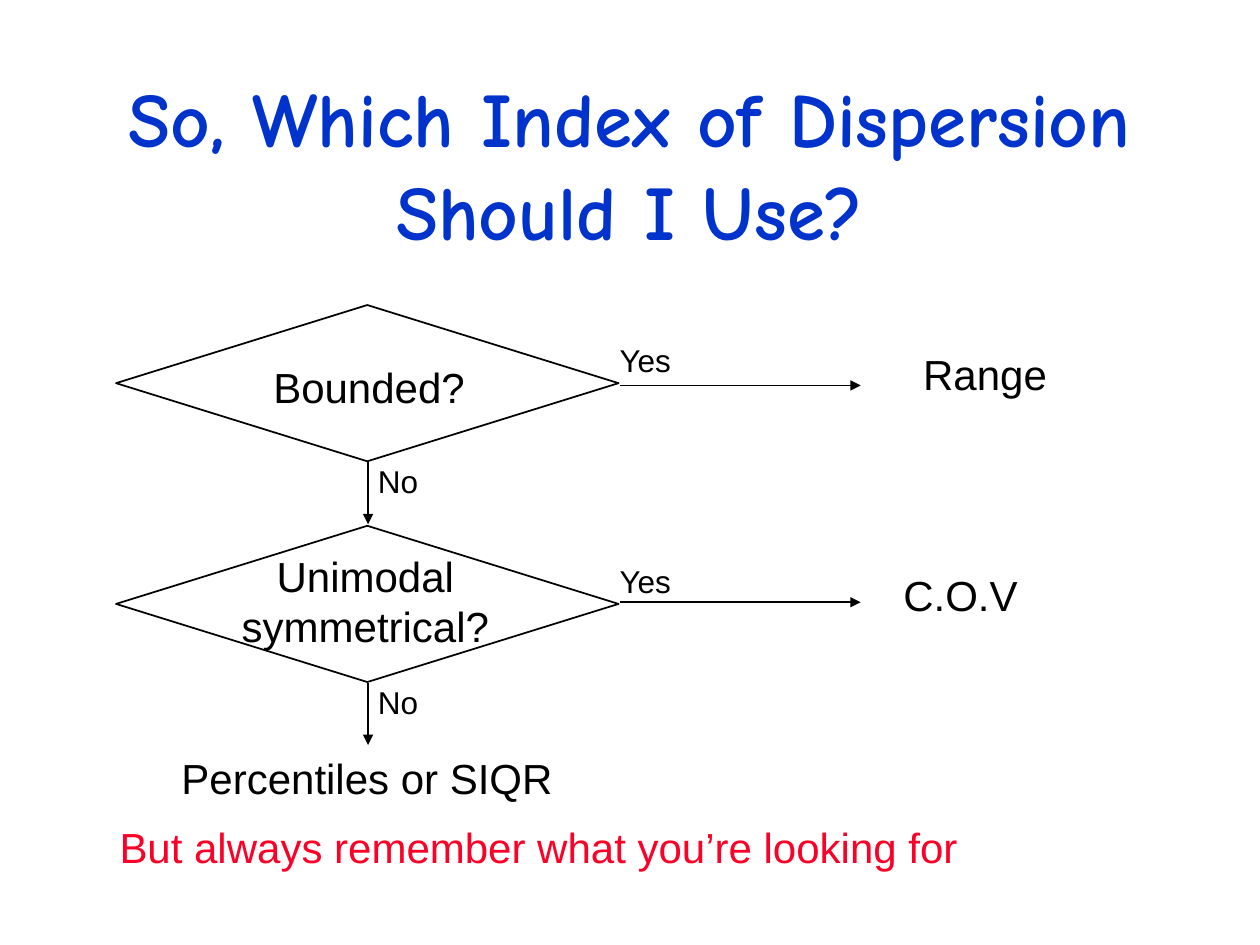
"""Build a decision flowchart for choosing an index of dispersion."""
import pptx
import pptx.dml.color
import pptx.enum.shapes
import pptx.enum.text
import pptx.oxml.ns
import pptx.util
from lxml import etree

Cm = pptx.util.Cm
Pt = pptx.util.Pt
RGB = pptx.dml.color.RGBColor
ALIGN = pptx.enum.text.PP_ALIGN

THEME = {
    "ink": RGB(0x00, 0x00, 0x00),
    "line": Pt(1),
    "title": {"name": "Comic Neue", "size": Pt(44), "bold": True, "color": RGB(0x00, 0x33, 0xCC)},
    "step": {"name": "Arial", "size": Pt(24), "color": RGB(0x00, 0x00, 0x00)},
    "label": {"name": "Arial", "size": Pt(18), "color": RGB(0x00, 0x00, 0x00)},
    "note": {"name": "Arial", "size": Pt(24), "color": RGB(0xFC, 0x01, 0x28)},
}
PITCH = 4.45


def write(tf, lines, style, align):
    for i, line in enumerate(lines):
        p = tf.paragraphs[0] if i == 0 else tf.add_paragraph()
        p.alignment = align
        r = p.add_run()
        r.text = line
        for key, value in THEME[style].items():
            if key == "color":
                r.font.color.rgb = value
            else:
                setattr(r.font, key, value)


def arrow(s, x1, y1, x2, y2):
    sp = s.shapes.add_connector(pptx.enum.shapes.MSO_CONNECTOR.STRAIGHT, Cm(x1), Cm(y1), Cm(x2), Cm(y2))
    sp.line.color.rgb = THEME["ink"]
    sp.line.width = THEME["line"]
    ln = sp.line._get_or_add_ln()
    etree.SubElement(ln, pptx.oxml.ns.qn("a:tailEnd"), type="triangle")
    etree.SubElement(sp._element.spPr, pptx.oxml.ns.qn("a:effectLst"))


prs = pptx.Presentation()
prs.slide_width, prs.slide_height = Cm(25.4), Cm(19.05)
s = prs.slides.add_slide(prs.slide_layouts[5])

title = s.shapes.title
for key, value in {"left": 1.9, "top": 1.7, "width": 21.6, "height": 3.18}.items():
    setattr(title, key, Cm(value))
tf = title.text_frame
for key, value in {
    "word_wrap": True,
    "auto_size": pptx.enum.text.MSO_AUTO_SIZE.NONE,
    "vertical_anchor": pptx.enum.text.MSO_ANCHOR.MIDDLE,
}.items():
    setattr(tf, key, value)
write(tf, ["So, Which Index of Dispersion Should I Use?"], "title", ALIGN.CENTER)

for row in range(2):
    sp = s.shapes.add_shape(
        pptx.enum.shapes.MSO_SHAPE.DIAMOND, Cm(2.34), Cm(6.15 + row * PITCH), Cm(10.13), Cm(3.15))
    sp.shadow.inherit = False
    sp.fill.background()
    sp.line.color.rgb = THEME["ink"]
    sp.line.width = THEME["line"]
    arrow(s, 7.42, 9.32 + row * PITCH, 7.42, 10.57 + row * PITCH)

for y in (7.77, 12.14):
    arrow(s, 12.5, y, 17.35, y)

texts = [
    (["Bounded?"], 5.26, 7.16, 4.37, 1.27, "step", ALIGN.LEFT, False),
    (["Unimodal", "symmetrical?"], 4.62, 10.97, 5.49, 2.29, "step", ALIGN.CENTER, False),
    (["Range"], 18.36, 6.91, 3.84, 1.6, "step", ALIGN.LEFT, False),
    (["C.O.V"], 17.96, 11.35, 3.58, 1.6, "step", ALIGN.LEFT, False),
    (["Percentiles or SIQR"], 2.03, 15.04, 10.74, 1.6, "step", ALIGN.CENTER, True),
    (["But always remember what you’re looking for"], 2.16, 16.43, 22.99, 1.6, "note", ALIGN.LEFT, False),
]
for row in range(2):
    texts.append((["Yes"], 12.24, 6.76 + row * PITCH, 1.6, 1.02, "label", ALIGN.LEFT, False))
    texts.append((["No"], 7.37, 9.19 + row * PITCH, 1.32, 1.02, "label", ALIGN.LEFT, False))

for lines, x, y, w, h, style, align, wrap in texts:
    tf = s.shapes.add_textbox(Cm(x), Cm(y), Cm(w), Cm(h)).text_frame
    tf.word_wrap = wrap
    tf.auto_size = pptx.enum.text.MSO_AUTO_SIZE.SHAPE_TO_FIT_TEXT
    write(tf, lines, style, align)

prs.save("out.pptx")
